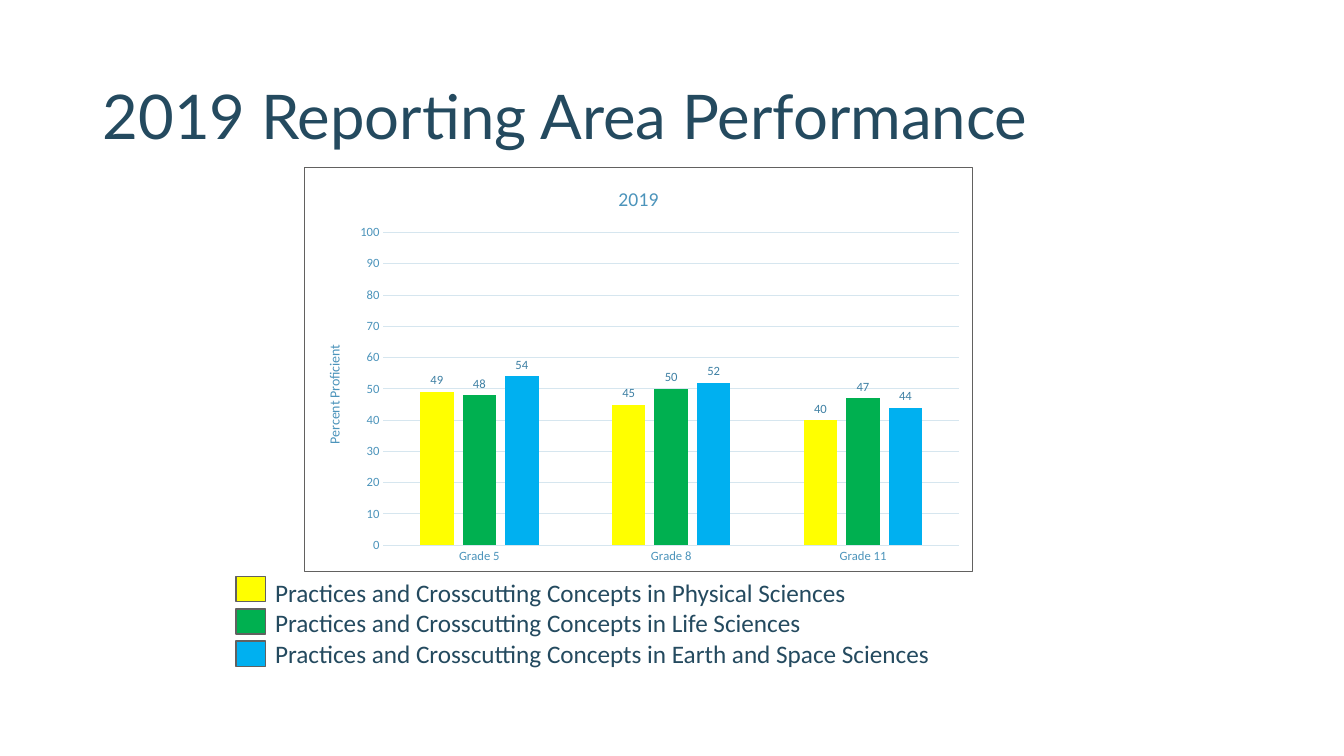
from pptx import Presentation
from pptx.chart.data import CategoryChartData
from pptx.dml.color import RGBColor
from pptx.enum.chart import XL_CHART_TYPE, XL_LABEL_POSITION, XL_TICK_MARK
from pptx.enum.shapes import MSO_SHAPE
from pptx.enum.text import MSO_ANCHOR, MSO_AUTO_SIZE
from pptx.oxml import parse_xml
from pptx.oxml.ns import nsdecls, qn
from pptx.util import Inches, Pt

COLORS = {
    "ink": "244A5F", "axis": "4C94BB", "label": "3E80A4", "grid": "D6E6EF",
    "border": "626160", "physical": "FFFF00", "life": "00B050", "earth": "00B0F0",
}
GRADES = ["Grade 5", "Grade 8", "Grade 11"]
AREAS = [
    ("physical", "Practices and Crosscutting Concepts in Physical Sciences", (49, 45, 40)),
    ("life", "Practices and Crosscutting Concepts in Life Sciences", (48, 50, 47)),
    ("earth", "Practices and Crosscutting Concepts in Earth and Space Sciences", (54, 52, 44)),
]


def apply(target, formats):
    for name, value in formats.items():
        setattr(target, name, value)


class ReportSlide:
    """Places elements on a grid of 100 columns by 100 rows."""

    def __init__(self, deck):
        self.column = deck.slide_width / 100
        self.row = deck.slide_height / 100
        self.slide = deck.slides.add_slide(deck.slide_layouts[6])

    def place(self, left, top, width, height):
        return (round(left * self.column), round(top * self.row),
                round(width * self.column), round(height * self.row))

    def color(self, name):
        return RGBColor.from_string(COLORS[name])

    def style_font(self, font, size, color, face="Calibri"):
        apply(font, {"size": Pt(size), "name": face, "bold": False})
        font.color.rgb = self.color(color)

    def style_line(self, line, color, width):
        line.color.rgb = self.color(color)
        line.width = Pt(width)

    def text(self, cells, lines, size, face="Calibri", spacing=None, **frame_formats):
        frame = self.slide.shapes.add_textbox(*self.place(*cells)).text_frame
        apply(frame, {"word_wrap": True, **frame_formats})
        frame.text = "\n".join(lines)
        for paragraph in frame.paragraphs:
            paragraph.line_spacing = spacing
            self.style_font(paragraph.runs[0].font, size, "ink", face)

    def swatch(self, cells, color):
        key = self.slide.shapes.add_shape(MSO_SHAPE.RECTANGLE, *self.place(*cells))
        key.shadow.inherit = False
        key.fill.solid()
        key.fill.fore_color.rgb = self.color(color)
        self.style_line(key.line, "border", 1)

    def heading(self, title, wording, size):
        title.text_frame.text = wording
        self.style_font(title.text_frame.paragraphs[0].runs[0].font, size, "axis")

    def column_chart(self, cells, title, value_title, grades, areas):
        scores = CategoryChartData(number_format="0")
        scores.categories = grades
        for number, (_, _, values) in enumerate(areas, 1):
            scores.add_series(f"Series {number}", values)
        chart = self.slide.shapes.add_chart(
            XL_CHART_TYPE.COLUMN_CLUSTERED, *self.place(*cells), scores).chart
        chart.has_legend = False
        self.style_font(chart.font, 10, "ink")
        self.heading(chart.chart_title, title, 14)
        chart.chart_title.include_in_layout = False

        # Axes
        grade_axis, percent_axis = chart.category_axis, chart.value_axis
        for axis in (grade_axis, percent_axis):
            apply(axis, {"major_tick_mark": XL_TICK_MARK.NONE,
                         "minor_tick_mark": XL_TICK_MARK.NONE})
            self.style_font(axis.tick_labels.font, 9, "axis")
        self.style_line(grade_axis.format.line, "grid", 0.75)
        apply(percent_axis, {"minimum_scale": 0, "maximum_scale": 100,
                             "major_unit": 10, "has_major_gridlines": True})
        percent_axis.format.line.fill.background()
        self.style_line(percent_axis.major_gridlines.format.line, "grid", 0.75)
        self.heading(percent_axis.axis_title, value_title, 10)
        upright = f"{qn('c:valAx')}/{qn('c:title')}//{qn('a:bodyPr')}"
        chart.element.find(f".//{upright}").set("rot", "-5400000")

        # Columns and their values
        plot = chart.plots[0]
        apply(plot, {"gap_width": 219, "overlap": -27, "vary_by_categories": False})
        for series, (color, _, _) in zip(plot.series, areas):
            series.format.fill.solid()
            series.format.fill.fore_color.rgb = self.color(color)
            labels = series.data_labels
            apply(labels, {"show_value": True, "position": XL_LABEL_POSITION.OUTSIDE_END})
            self.style_font(labels.font, 9, "label")

        # Frame around the chart
        chart.element.find(qn("c:chart")).addnext(parse_xml(
            f'<c:spPr {nsdecls("c", "a")}><a:noFill/><a:ln w="{Pt(0.75)}"><a:solidFill>'
            f'<a:srgbClr val="{COLORS["border"]}"/></a:solidFill></a:ln></c:spPr>'))


def main():
    deck = Presentation()
    apply(deck, {"slide_width": Inches(13.33), "slide_height": Inches(7.5)})
    report = ReportSlide(deck)

    # Title
    report.text((6.9, 6.13, 93.1, 19.33), ["2019 Reporting Area Performance"], 44,
                "Lato", 0.9, vertical_anchor=MSO_ANCHOR.MIDDLE)

    # Scores by grade
    report.column_chart((22.65, 22.13, 49.73, 53.6), "2019", "Percent Proficient",
                        GRADES, AREAS)

    # Key to the reporting areas
    report.text((19.73, 75.73, 69.53, 13.47), [wording for _, wording, _ in AREAS], 18,
                auto_size=MSO_AUTO_SIZE.SHAPE_TO_FIT_TEXT)
    for index, (color, _, _) in enumerate(AREAS):
        report.swatch((17.55, 76.27 + 4.27 * index, 2.2, 3.33), color)

    deck.save("out.pptx")


if __name__ == "__main__":
    main()
